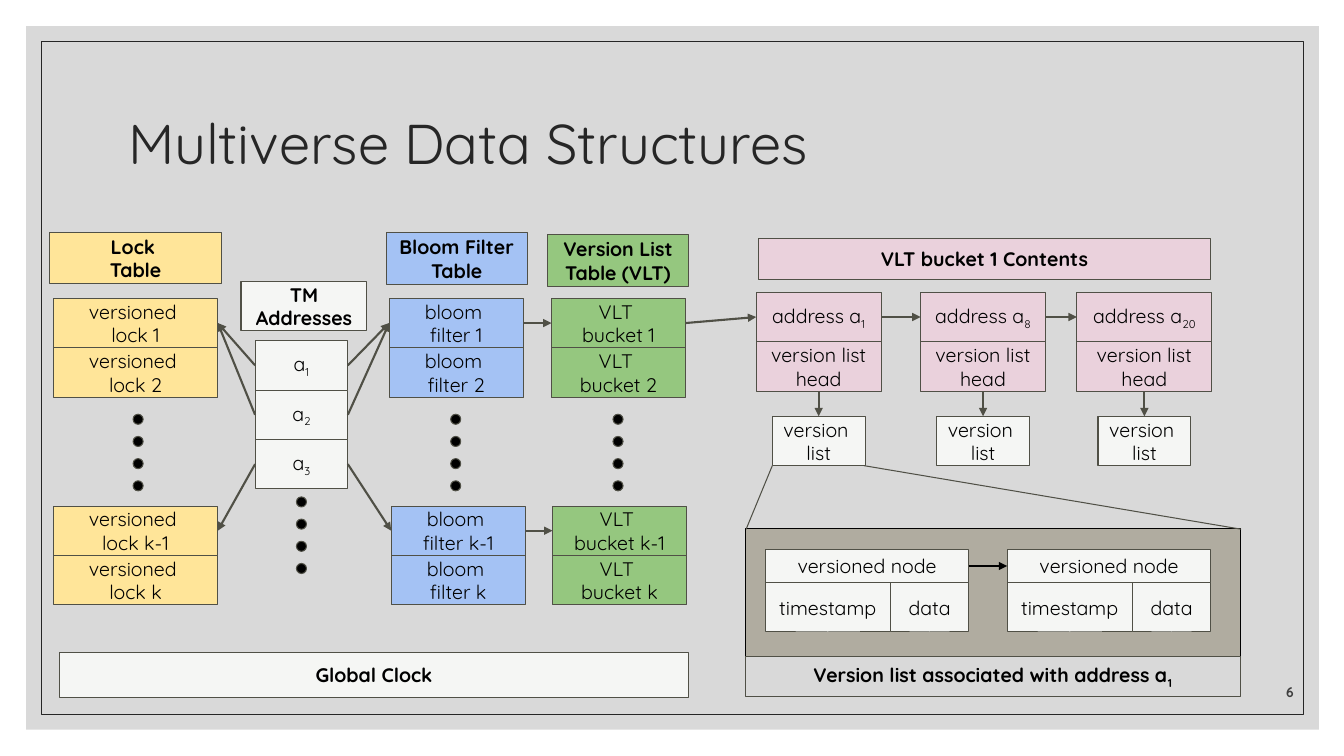
import pptx
import pptx.util
import pptx.dml.color
import pptx.enum.shapes
import pptx.enum.text
import pptx.oxml
import pptx.oxml.ns

SCALE = 9144  # one px is a hundredth of an inch
FONT = "Quicksand"
PALE, PINK, BLUE, GREEN, GOLD = "F5F6F4", "EAD1DC", "A4C2F4", "95C77F", "FFE599"
INK, BLACK = "505046", "000000"
ROW = 49
SHAPE = pptx.enum.shapes.MSO_SHAPE
ALIGN = pptx.enum.text.PP_ALIGN
ANCHOR = pptx.enum.text.MSO_ANCHOR
LEFT, RIGHT, TOP, BOTTOM = 1, 3, 0, 2


def px(*vals):
    return [pptx.util.Emu(v * SCALE) for v in vals]


def rgb(code):
    return pptx.dml.color.RGBColor.from_string(code)


def style(run, size, color, bold):
    font = run.font
    font.name, font.size, font.bold = FONT, pptx.util.Pt(size), bold
    font.color.rgb = rgb(color)


def write(frame, text, size=14, color=BLACK, bold=False, align=ALIGN.CENTER):
    """Fill a frame; in each line, what follows "_" is a subscript."""
    frame.word_wrap = True
    frame.text = text
    for para in frame.paragraphs:
        base, _, sub = para.text.partition("_")
        para.text = base
        para.alignment = align
        if sub:
            run = para.add_run()
            run.text = sub
            run._r.get_or_add_rPr().set("baseline", "-25000")
        for run in para.runs:
            style(run, size, color, bold)


def shape(slide, area, fill, line=INK, kind=SHAPE.RECTANGLE):
    item = slide.shapes.add_shape(kind, *px(*area))
    item.shadow.inherit = False
    if fill:
        item.fill.solid()
        item.fill.fore_color.rgb = rgb(fill)
    else:
        item.fill.background()
    if line:
        item.line.color.rgb = rgb(line)
        item.line.width = pptx.util.Pt(0.75)
    else:
        item.line.fill.background()
    return item


def box(slide, area, fill, text, bold=False):
    item = shape(slide, area, fill)
    frame = item.text_frame
    frame.margin_left = frame.margin_right = px(10)[0]
    frame.margin_top = frame.margin_bottom = px(10)[0]
    frame.vertical_anchor = ANCHOR.MIDDLE
    write(frame, text, bold=bold)
    return item


def dots(slide, x, y):
    for i in range(4):
        shape(slide, (x, y + 22 * i, 10, 10), BLACK, kind=SHAPE.OVAL)


def line(slide, ends, color=INK, width=0.75):
    item = slide.shapes.add_connector(
        pptx.enum.shapes.MSO_CONNECTOR.STRAIGHT, *px(*ends))
    item.line.color.rgb = rgb(color)
    item.line.width = pptx.util.Pt(width)
    props = item._element.spPr
    props.append(pptx.oxml.parse_xml(
        "<a:effectLst %s/>" % pptx.oxml.ns.nsdecls("a")))
    return item


def arrow(slide, start, out, end, into, color=INK):
    """Join side "out" of start to side "into" of end."""
    item = line(slide, (0, 0, 0, 0), color, 1.5)
    item.begin_connect(start, out)
    item.end_connect(end, into)
    item.line._get_or_add_ln().append(pptx.oxml.parse_xml(
        '<a:tailEnd %s type="triangle"/>' % pptx.oxml.ns.nsdecls("a")))


def column(slide, fill, title, head, x, wide, word, dot, shift=0):
    """Draw a table of k entries and return its boxes from top to bottom."""
    box(slide, head, fill, title, True)
    rows = (("1", 296, 0), ("2", 345, 0), ("k-1", 502, shift), ("k", 551, shift))
    cells = [box(slide, (x + dx, y, wide, ROW), fill, f"{word} {key}")
             for key, y, dx in rows]
    dots(slide, dot, 411)
    return cells


def node(slide, x):
    top = box(slide, (x, 545, 202, 33), PALE, "versioned node")
    box(slide, (x, 578, 124, ROW), PALE, "timestamp")
    box(slide, (x + 124, 578, 78, ROW), PALE, "data")
    return top


def panel(slide):
    shape(slide, (739, 524, 491, 127), "B0ACA0", BLACK)
    first, second = [node(slide, x) for x in (759, 999)]
    arrow(slide, first, RIGHT, second, LEFT, BLACK)
    line(slide, (766, 462, 740, 525))
    line(slide, (857, 462, 1231, 525))
    box(slide, (739, 651, 491, 40), None,
        "Version list associated with address a_1", True)


def bucket(slide, source):
    """Draw the chain of addresses that hangs from the source box."""
    box(slide, (752, 237, 449, 40), PINK, "VLT bucket 1 Contents", True)
    last = source
    for key, x, wide in (("1", 750, 124), ("8", 913, 124), ("20", 1068, 134)):
        name = box(slide, (x, 290, wide, ROW), PINK, f"address a_{key}")
        head = box(slide, (x, 339, wide, ROW), PINK, "version list head")
        item = box(slide, (x + (wide - 92) // 2, 413, 92, ROW), PALE,
                   "version \nlist")
        arrow(slide, head, BOTTOM, item, TOP)
        arrow(slide, last, RIGHT, name, LEFT)
        last = name


def backdrop(slide):
    """Lay the grey sheet and its frame behind everything else."""
    sheet = shape(slide, (26, 26, 1282, 698), "D9D9D9", None)
    border = shape(slide, (41, 41, 1252, 668), None, "262626")
    title = slide.shapes.title._element
    for item in (sheet, border):
        title.addprevious(item._element)


def heading(slide):
    title = slide.shapes.title
    title.left, title.top, title.width, title.height = px(117, 70, 1100, 150)
    frame = title.text_frame
    write(frame, "Multiverse Data Structures", 40, "262626", align=ALIGN.LEFT)
    frame.auto_size = pptx.enum.text.MSO_AUTO_SIZE.NONE
    frame.vertical_anchor = ANCHOR.MIDDLE
    frame.paragraphs[0].line_spacing = 0.9


def number(slide):
    frame = slide.shapes.add_textbox(*px(1201, 660, 92, 40)).text_frame
    write(frame, "6", 10, "3F3F3F", True, ALIGN.RIGHT)
    frame.vertical_anchor = ANCHOR.BOTTOM


def main():
    deck = pptx.Presentation()
    deck.slide_width, deck.slide_height = px(1333, 750)
    slide = deck.slides.add_slide(deck.slide_layouts.get_by_name("Title Only"))
    backdrop(slide)
    heading(slide)
    number(slide)
    panel(slide)

    locks = column(slide, GOLD, "Lock \nTable", (49, 231, 171, 50),
                   53, 163, "versioned \nlock", 132)
    blooms = column(slide, BLUE, "Bloom Filter Table", (383, 231, 140, 51),
                    386, 133, "bloom \nfilter", 447, 2)
    lists = column(slide, GREEN, "Version List Table (VLT)",
                   (543, 233, 140, 51), 547, 133, "VLT \nbucket", 608, 1)

    box(slide, (239, 279, 125, ROW), PALE, "TM Addresses", True)
    dots(slide, 294, 493)
    for i, row in enumerate((0, 0, 2)):
        cell = box(slide, (253, 338 + i * ROW, 92, ROW), PALE, f"a_{i + 1}")
        arrow(slide, cell, LEFT, locks[row], RIGHT)
        arrow(slide, cell, RIGHT, blooms[row], LEFT)
    for row in (0, 2):
        arrow(slide, blooms[row], RIGHT, lists[row], LEFT)
    bucket(slide, lists[0])
    box(slide, (59, 647, 624, 45), PALE, "Global Clock", True)
    deck.save("out.pptx")


if __name__ == "__main__":
    main()
